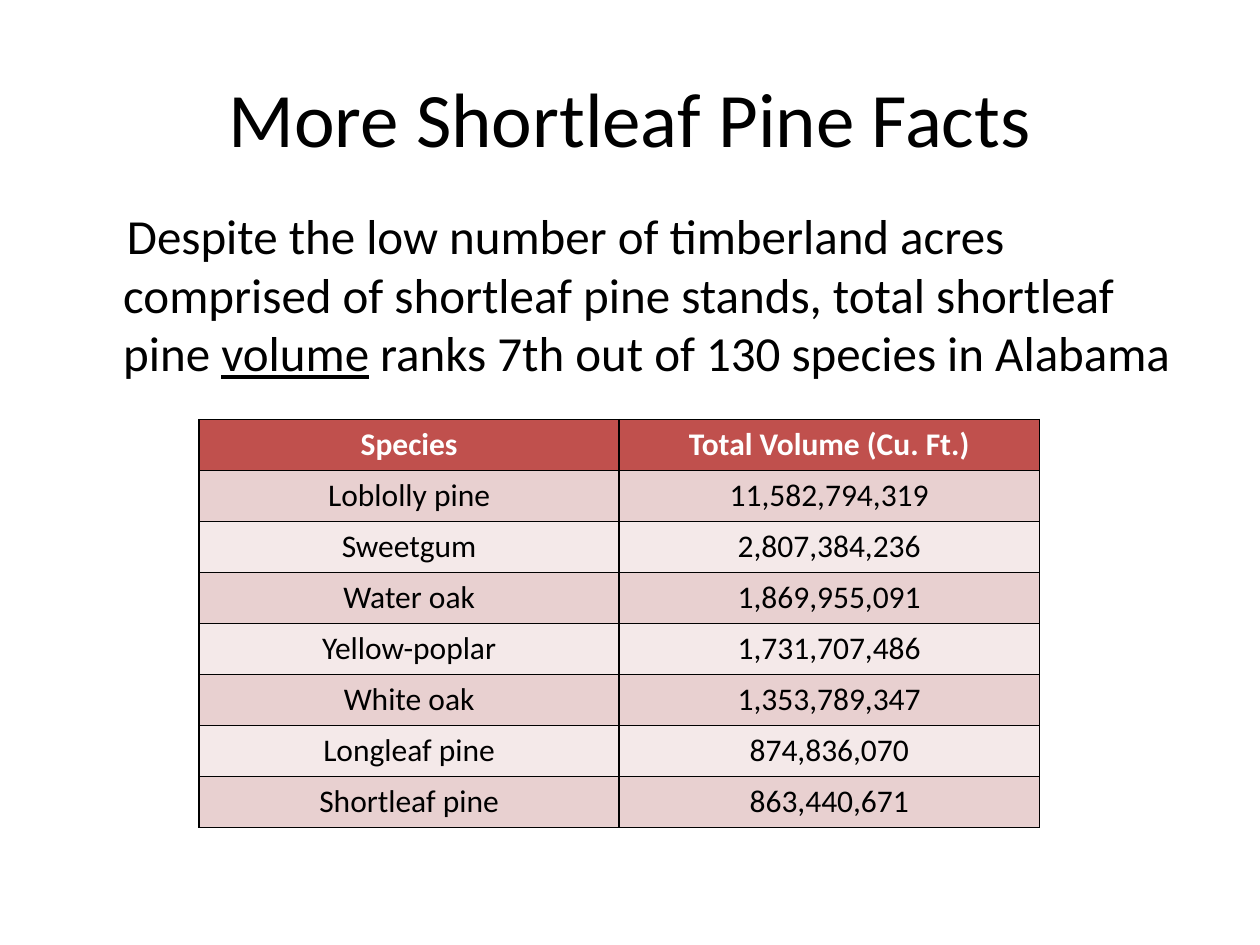
"""Build a slide on shortleaf pine volume with a ranked species table."""
from lxml import etree
from pptx import Presentation
from pptx import util as u
from pptx.dml.color import RGBColor
from pptx.enum import text
from pptx.oxml.ns import qn

BLACK = RGBColor(0x00, 0x00, 0x00)
WHITE = RGBColor(0xFF, 0xFF, 0xFF)
HEADER_RED = RGBColor(0xC0, 0x50, 0x4D)
BANDS = (RGBColor(0xE8, 0xD0, 0xD0), RGBColor(0xF4, 0xE9, 0xE9))

FACT = (
    ("Despite the low number of timberland acres comprised of shortleaf pine "
     "stands, total shortleaf pine ", False),
    ("volume", True),
    (" ranks 7th out of 130 species in Alabama", False),
)
VOLUMES = (
    ("Species", "Total Volume (Cu. Ft.)"),
    ("Loblolly pine", "11,582,794,319"),
    ("Sweetgum", "2,807,384,236"),
    ("Water oak", "1,869,955,091"),
    ("Yellow-poplar", "1,731,707,486"),
    ("White oak", "1,353,789,347"),
    ("Longleaf pine", "874,836,070"),
    ("Shortleaf pine", "863,440,671"),
)


def add_span(para, words, size=18, color=BLACK, bold=False, underline=False):
    """Add formatted text to a paragraph."""
    span = para.add_run()
    span.text = words
    font = span.font
    font.name, font.size = "Calibri", u.Pt(size)
    font.bold, font.underline = bold, underline
    font.color.rgb = color


def set_title(page, words):
    """Place and fill the title placeholder."""
    title = page.shapes.title
    title.left, title.top = u.Inches(0.5), u.Inches(0.3)
    title.width, title.height = u.Inches(9), u.Inches(1.25)
    title.text_frame.vertical_anchor = text.MSO_ANCHOR.MIDDLE
    para = title.text_frame.paragraphs[0]
    para.alignment = text.PP_ALIGN.CENTER
    add_span(para, words, size=44)


def add_fact(page, spans):
    """Add the indented statement under the title."""
    box = page.shapes.add_textbox(u.Inches(0.5), u.Inches(1.5), u.Inches(9), u.Inches(1.7))
    frame = box.text_frame
    frame.word_wrap = True
    frame.margin_top = u.Inches(0.13)
    para = frame.paragraphs[0]
    properties = para._p.get_or_add_pPr()
    properties.set("marL", str(u.Inches(0.38)))
    properties.set("indent", str(u.Inches(0.03)))
    for words, underline in spans:
        add_span(para, words, size=28, underline=underline)


def add_borders(cell):
    """Draw a thin black line on each side of a cell."""
    properties = cell._tc.get_or_add_tcPr()
    for position, side in enumerate(("a:lnL", "a:lnR", "a:lnT", "a:lnB")):
        line = etree.Element(qn(side), w=str(u.Pt(1)))
        fill = etree.SubElement(line, qn("a:solidFill"))
        etree.SubElement(fill, qn("a:srgbClr"), val=str(BLACK))
        properties.insert(position, line)


def fill_cell(cell, words, fill, **style):
    """Write centred text in a filled, bordered cell."""
    cell.fill.solid()
    cell.fill.fore_color.rgb = fill
    para = cell.text_frame.paragraphs[0]
    para.alignment = text.PP_ALIGN.CENTER
    add_span(para, words, **style)
    add_borders(cell)


def add_volume_table(page, rows):
    """Add the species table with a header and alternating bands."""
    height = 0.405
    table = page.shapes.add_table(
        len(rows), len(rows[0]), u.Inches(1.58), u.Inches(3.33),
        u.Inches(6.67), u.Inches(height * len(rows))).table
    for index, values in enumerate(rows):
        if index == 0:
            fill, style = HEADER_RED, {"color": WHITE, "bold": True}
        else:
            fill, style = BANDS[(index - 1) % 2], {}
        for column, words in enumerate(values):
            fill_cell(table.cell(index, column), words, fill, **style)


def main():
    """Build and save the slide."""
    deck = Presentation()
    deck.slide_width, deck.slide_height = u.Inches(10), u.Inches(7.5)
    page = deck.slides.add_slide(deck.slide_layouts[5])
    set_title(page, "More Shortleaf Pine Facts")
    add_fact(page, FACT)
    add_volume_table(page, VOLUMES)
    deck.save("out.pptx")


if __name__ == "__main__":
    main()
